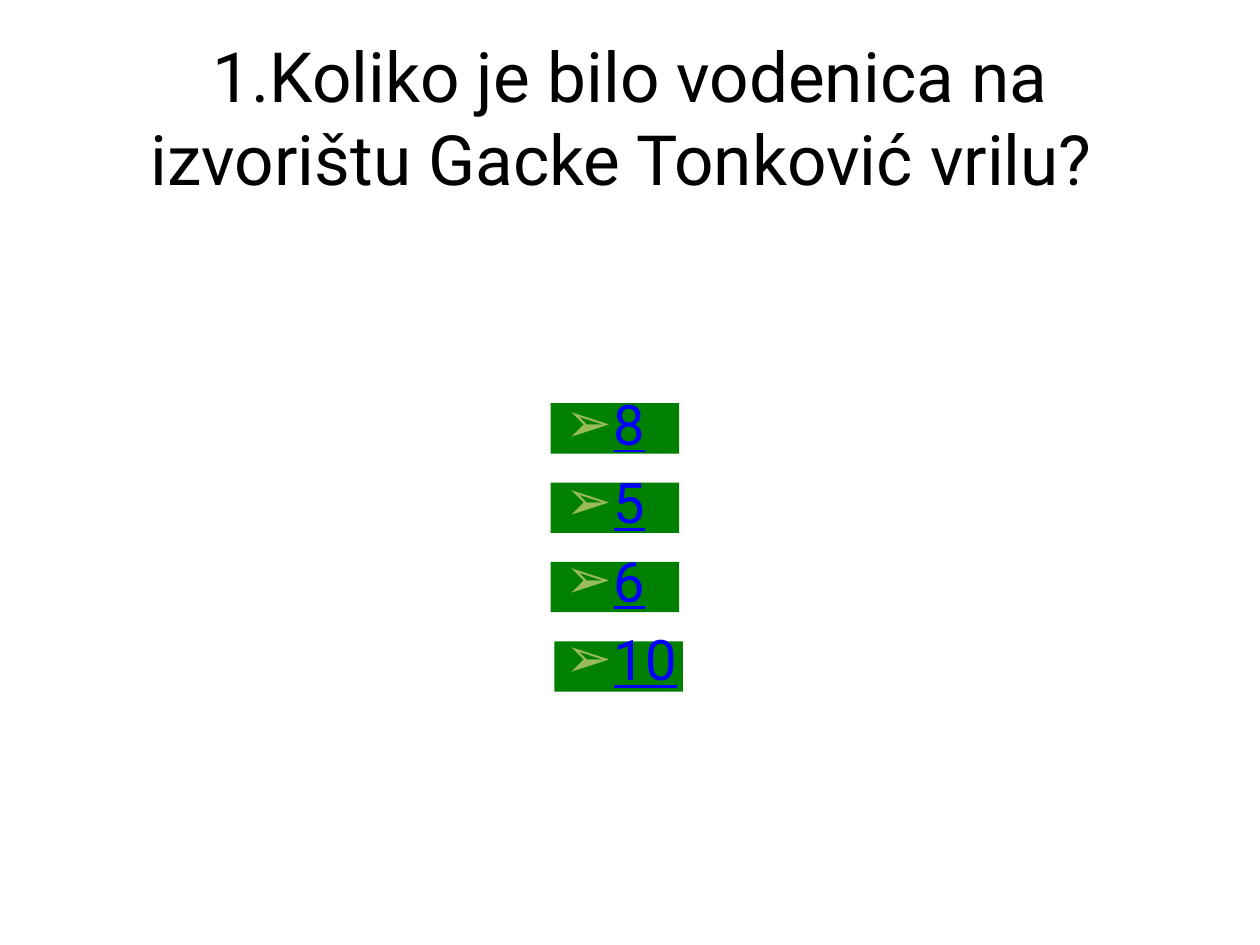
import pptx
import pptx.dml.color
import pptx.enum.shapes
import pptx.enum.text
import pptx.oxml
import pptx.oxml.ns
import pptx.util
from pptx.util import Inches

COLOURS = {
    "title": "000000",
    "button": "008000",
    "answer": "0000FF",
    "bullet": "9BBB59",
}
FONT = "Roboto"
QUESTION = "1.Koliko je bilo vodenica na izvorištu Gacke Tonković vrilu? "
ANSWERS = ["8", "5", "6", "10"]
BUTTON_LEFTS = [4.37, 4.37, 4.37, 4.4]
BUTTON_TOP, BUTTON_PITCH = 3.2, 0.63


def colour(name):
    return pptx.dml.color.RGBColor.from_string(COLOURS[name])


def place(box, left, top, width, height):
    box.left, box.top = Inches(left), Inches(top)
    box.width, box.height = Inches(width), Inches(height)
    box.text_frame.word_wrap = True
    box.text_frame.auto_size = pptx.enum.text.MSO_AUTO_SIZE.NONE


def add_span(para, text, size, colour_name, underline=None):
    span = para.add_run()
    span.text = text
    span.font.name = FONT
    span.font.size = pptx.util.Pt(size)
    span.font.color.rgb = colour(colour_name)
    span.font.underline = underline


def add_bullet(para):
    properties = para._p.get_or_add_pPr()
    properties.set("marL", str(Inches(0.38)))
    properties.set("indent", str(Inches(-0.38)))
    namespace = pptx.oxml.ns.nsdecls("a")
    for markup in (
        f'<a:buClr {namespace}><a:srgbClr val="{COLOURS["bullet"]}"/></a:buClr>',
        f'<a:buFont {namespace} typeface="{FONT}"/>',
        f'<a:buChar {namespace} char="➢"/>',
    ):
        properties.append(pptx.oxml.parse_xml(markup))


def fill_title(box):
    place(box, 0.5, 0.3, 9, 1.25)
    box.text_frame.vertical_anchor = pptx.enum.text.MSO_ANCHOR.MIDDLE
    para = box.text_frame.paragraphs[0]
    para.alignment = pptx.enum.text.PP_ALIGN.CENTER
    add_span(para, QUESTION, 39.6, "title")


def add_button(page, left, top):
    button = page.shapes.add_shape(
        pptx.enum.shapes.MSO_SHAPE.RECTANGLE,
        Inches(left), Inches(top), Inches(1.02), Inches(0.4))
    button.shadow.inherit = False
    button.fill.solid()
    button.fill.fore_color.rgb = colour("button")
    button.line.fill.background()


def fill_answers(box):
    place(box, 4.39, 3.04, 9, 4.95)
    frame = box.text_frame
    for index, answer in enumerate(ANSWERS):
        para = frame.add_paragraph() if index else frame.paragraphs[0]
        para.space_before = pptx.util.Pt(6.4 if index else 0)
        add_bullet(para)
        add_span(para, answer, 32, "answer", underline=True)


def main():
    deck = pptx.Presentation()
    deck.slide_width, deck.slide_height = Inches(10), Inches(7.5)
    page = deck.slides.add_slide(deck.slide_layouts[1])

    # Question
    fill_title(page.shapes.title)

    # Green buttons behind the answers
    for index, left in enumerate(BUTTON_LEFTS):
        add_button(page, left, BUTTON_TOP + index * BUTTON_PITCH)

    # Answer list, brought in front of the buttons
    answers = page.placeholders[1]
    fill_answers(answers)
    page.shapes._spTree.append(answers._element)

    deck.save("out.pptx")


if __name__ == "__main__":
    main()
